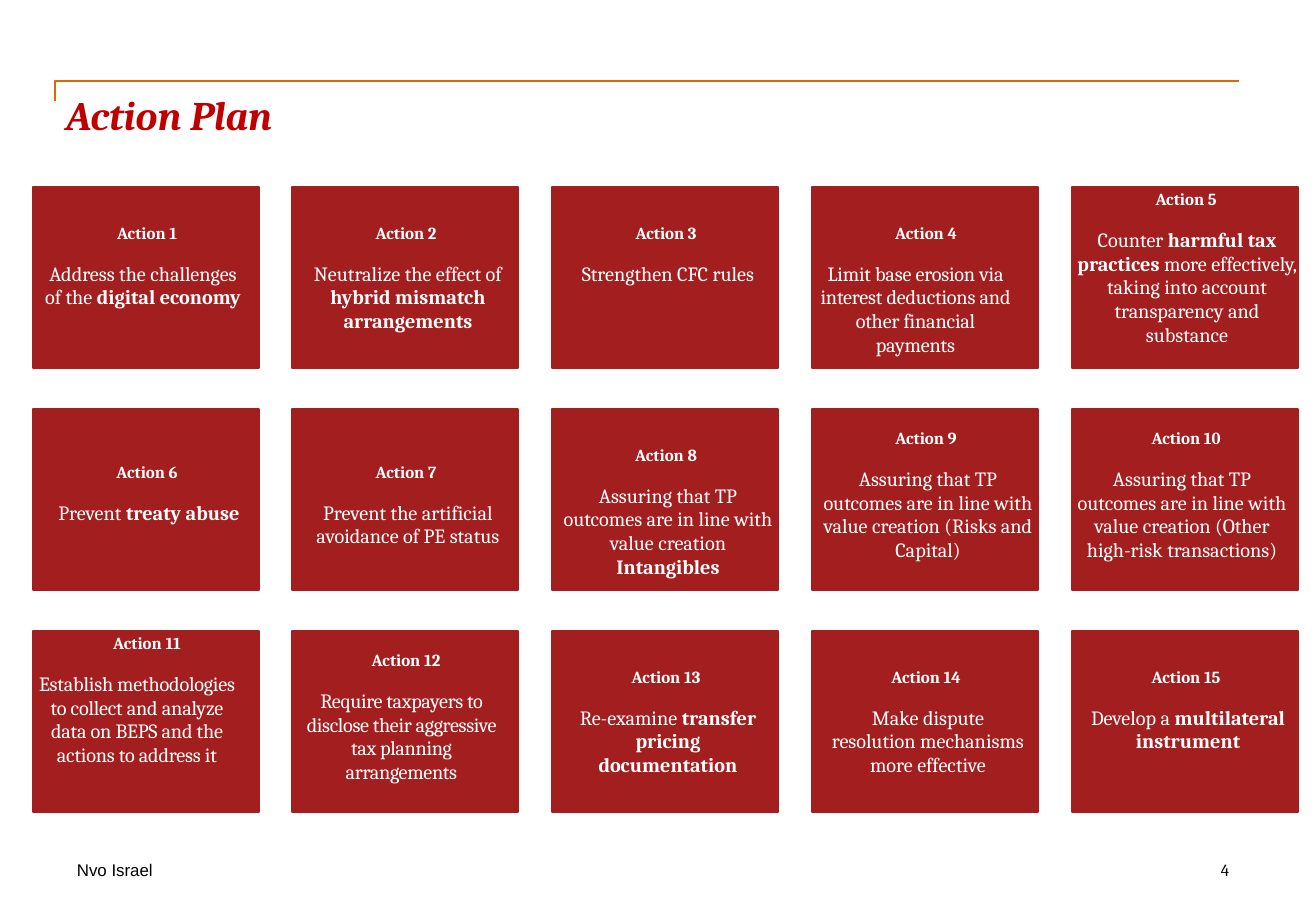
from dataclasses import dataclass
from typing import Any

from pptx import Presentation
from pptx.dml.color import RGBColor as Rgb
from pptx.enum.shapes import MSO_SHAPE as Shape
from pptx.enum.text import MSO_ANCHOR as Anchor, PP_ALIGN as Align
from pptx.util import Pt

SCALE = 914400 / 121.5  # EMU per px


@dataclass(frozen=True)
class Theme:
    card: Rgb = Rgb(0xA3, 0x1E, 0x1E)
    title: Rgb = Rgb(0xC0, 0x00, 0x00)
    rule: Rgb = Rgb(0xDC, 0x69, 0x00)
    white: Rgb = Rgb(0xFF, 0xFF, 0xFF)
    black: Rgb = Rgb(0x00, 0x00, 0x00)
    serif: str = "Cambria"
    sans: str = "Arial"
    big: Pt = Pt(24)
    mid: Pt = Pt(12)
    small: Pt = Pt(10)


@dataclass(frozen=True)
class Card:
    body: str  # *bold* spans, one paragraph per line
    drop: int  # 10 pt lines left free above the heading
    left: int = 6
    right: int = 0
    track: int = 0  # hundredths of a point


@dataclass(frozen=True)
class Label:
    text: str
    box: tuple[int, int, int, int]
    font: dict[str, Any]
    color: Rgb


LOOK = Theme()
COLS = 5
CARDS = [
    Card("Address the challenges of the *digital economy*", 2, 10, 16),
    Card("Neutralize the effect of *hybrid mismatch arrangements*", 2),
    Card("Strengthen CFC rules", 2),
    Card("Limit base erosion via interest deductions and other financial payments", 2, 6, 25, -10),
    Card("Counter *harmful tax practices* more effectively, taking into account "
         "transparency and substance", 0, 4),
    Card("Prevent *treaty abuse*", 3),
    Card("Prevent the artificial avoidance of PE status", 3),
    Card("Assuring that TP outcomes are in line with value creation *Intangibles*", 2, 10, 4),
    Card("Assuring that TP outcomes are in line with value creation (Risks and Capital)", 1, 10, 4),
    Card("Assuring that TP outcomes are in line with value creation "
         "(Other high-risk transactions)", 1, 2, 8),
    Card("Establish methodologies to collect and analyze data on BEPS "
         "and the actions to address it", 0, 6, 24, -10),
    Card("Require taxpayers to disclose their aggressive tax planning arrangements", 1, 6, 13, -20),
    Card("Re-examine *transfer pricing*\n*documentation*", 2),
    Card("Make dispute\nresolution mechanisms more effective", 2),
    Card("Develop a *multilateral instrument*", 2),
]
LABELS = [
    Label("Action Plan", (66, 90, 1163, 122),
          dict(name=LOOK.serif, size=LOOK.big, bold=True, italic=True), LOOK.title),
    Label("Nvo Israel", (77, 860, 373, 21), dict(name=LOOK.sans, size=LOOK.small), LOOK.black),
    Label("4", (1221, 860, 53, 40), dict(name=LOOK.serif, size=LOOK.small), LOOK.black),
]


def px(n: float) -> int:
    return round(n * SCALE)


def apply(item: Any, values: dict[str, Any]) -> None:
    for key, val in values.items():
        setattr(item, key, val)


def set_frame(frame: Any, top: int = 0) -> None:
    apply(frame, dict(word_wrap=True, vertical_anchor=Anchor.TOP, margin_left=0,
                      margin_right=0, margin_top=top, margin_bottom=0))


def add_run(par: Any, text: str, font: dict[str, Any], color: Rgb) -> Any:
    run = par.add_run()
    run.text = text
    apply(run.font, font)
    run.font.color.rgb = color
    return run


def set_par(par: Any, left: int, right: int, form: dict[str, Any]) -> None:
    apply(par, dict(alignment=Align.CENTER, **form))
    props = par._p.get_or_add_pPr()
    props.set("marL", str(px(left)))
    props.set("marR", str(px(right)))


def add_label(slide: Any, label: Label) -> None:
    frame = slide.shapes.add_textbox(*map(px, label.box)).text_frame
    set_frame(frame)
    add_run(frame.paragraphs[0], label.text, label.font, label.color)


def add_card(slide: Any, index: int, card: Card) -> None:
    row, col = divmod(index, COLS)
    box = (33 + 1039 * col // 4, 187 + 222 * row, 226, 181)
    shape = slide.shapes.add_shape(Shape.RECTANGLE, *map(px, box))
    shape.shadow.inherit = False
    shape.fill.solid()
    shape.fill.fore_color.rgb = LOOK.card
    shape.line.color.rgb = LOOK.card
    shape.line.width = Pt(1.2)

    # Heading
    frame = shape.text_frame
    set_frame(frame, px(5) + card.drop * Pt(10))
    head = frame.paragraphs[0]
    set_par(head, 2, 0, dict(line_spacing=Pt(10)))
    add_run(head, f"Action {index + 1}",
            dict(name=LOOK.serif, size=LOOK.small, bold=True), LOOK.white)

    # Body: every second span is bold
    for order, line in enumerate(card.body.split("\n")):
        par = frame.add_paragraph()
        gap = Pt(0) if order else Pt(11.4)
        set_par(par, card.left, card.right, dict(line_spacing=Pt(14), space_before=gap))
        for part, text in enumerate(line.split("*")):
            if text:
                font = dict(name=LOOK.serif, size=LOOK.mid, bold=part % 2 == 1)
                run = add_run(par, text, font, LOOK.white)
                if card.track:
                    run.font._element.set("spc", str(card.track))


def add_rule(slide: Any) -> None:
    pen = slide.shapes.build_freeform(55, 101, scale=SCALE)
    pen.add_line_segments([(55, 81), (1239, 81)], close=False)
    rule = pen.convert_to_shape()
    rule.shadow.inherit = False
    rule.fill.background()
    rule.line.color.rgb = LOOK.rule
    rule.line.width = Pt(1)


def main() -> None:
    deck = Presentation()
    apply(deck, dict(slide_width=px(1316), slide_height=px(911)))
    slide = deck.slides.add_slide(deck.slide_layouts[6])
    add_rule(slide)
    for label in LABELS:
        add_label(slide, label)
    for index, card in enumerate(CARDS):
        add_card(slide, index, card)
    deck.save("out.pptx")


if __name__ == "__main__":
    main()
